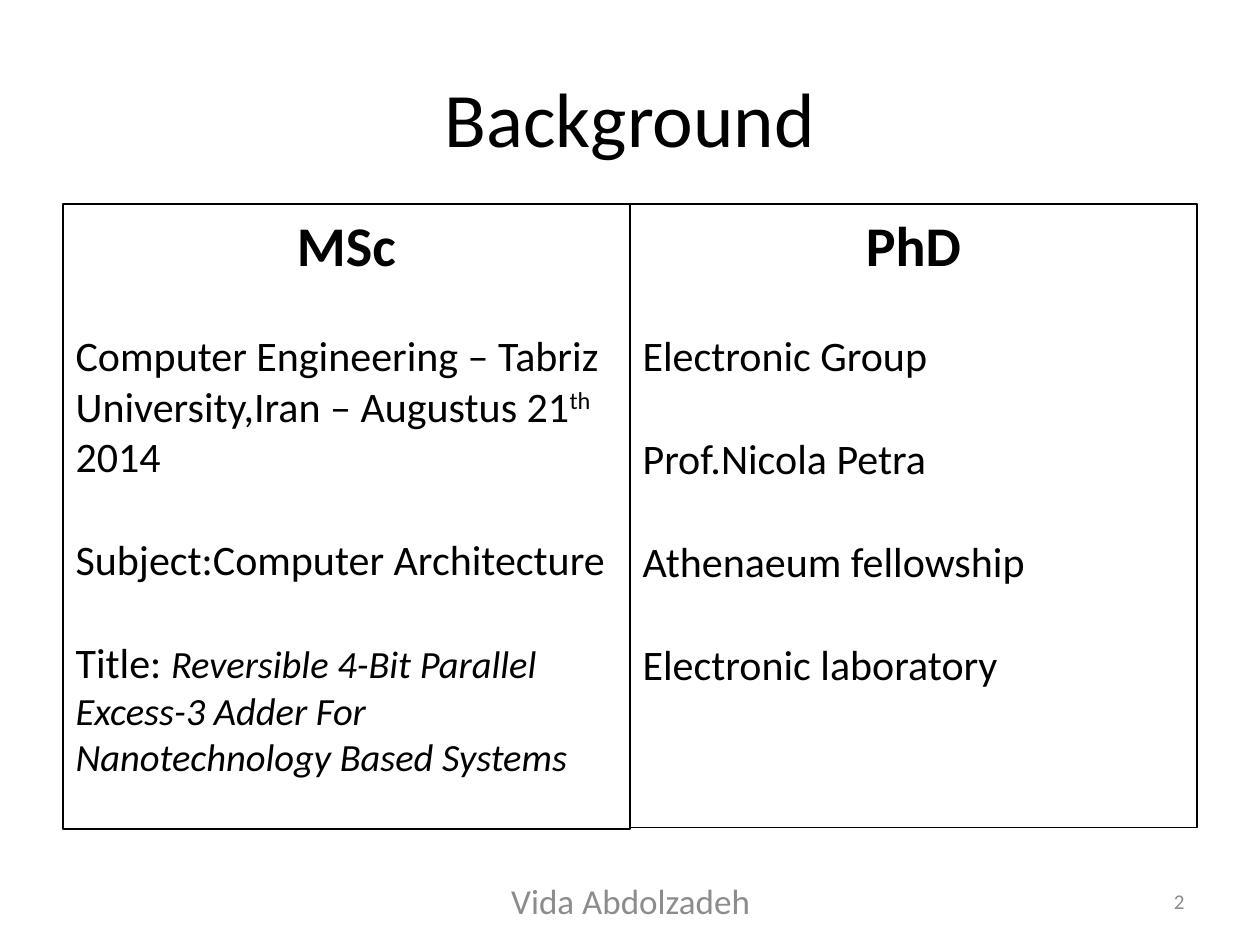
from lxml import etree
from pptx import Presentation
from pptx.dml.color import RGBColor
from pptx.enum.text import MSO_ANCHOR, MSO_AUTO_SIZE, PP_ALIGN
from pptx.oxml.ns import qn
from pptx.util import Cm, Pt

LEFT, CENTER, RIGHT = PP_ALIGN.LEFT, PP_ALIGN.CENTER, PP_ALIGN.RIGHT
TOP, MIDDLE = MSO_ANCHOR.TOP, MSO_ANCHOR.MIDDLE
NO_AUTOFIT = MSO_AUTO_SIZE.NONE

FONT = "Calibri"
BLACK, GRAY = "000000", "8C8C8C"
TWO_CONTENT_LAYOUT = 3
MARGIN, COLUMN_TOP, COLUMN_WIDTH = 1.27, 4.11, 11.43
FOOTER_TOP, FOOTER_HEIGHT = 17.65, 1.02

# Each paragraph is a list of (text, style) runs
MSC_ITEMS = [
    [("Computer Engineering – Tabriz University,Iran – Augustus 21", {}),
     ("th", {"superscript": True}), (" 2014", {})],
    [("Subject:Computer Architecture", {})],
    [("Title: ", {}),
     ("Reversible 4-Bit Parallel Excess-3 Adder For Nanotechnology Based Systems",
      {"size": 22, "italic": True})],
]
PHD_ITEMS = [[(text, {})] for text in (
    "Electronic Group", "Prof.Nicola Petra",
    "Athenaeum fellowship", "Electronic laboratory")]


def rgb(value):
    return RGBColor.from_string(value)


def place(box, left, top, width, height):
    box.left, box.top = Cm(left), Cm(top)
    box.width, box.height = Cm(width), Cm(height)


def prepare_frame(box, anchor):
    frame = box.text_frame
    frame.word_wrap = True
    frame.auto_size = NO_AUTOFIT
    frame.vertical_anchor = anchor
    return frame


def add_span(para, text, size=24, color=BLACK, bold=False, italic=False,
             superscript=False):
    span = para.add_run()
    span.text = text
    font = span.font
    font.name, font.size = FONT, Pt(size)
    font.bold, font.italic = bold, italic
    font.color.rgb = rgb(color)
    if superscript:
        font._element.set("baseline", "30000")


def format_para(para, align, space_before):
    """Remove the bullet and indent, then set alignment and spacing."""
    properties = para._p.get_or_add_pPr()
    properties.set("marL", "0")
    properties.set("indent", "0")
    etree.SubElement(properties, qn("a:buNone"))
    para.alignment = align
    para.space_before = Pt(space_before)


def fill_title(box, text):
    place(box, MARGIN, 0.76, 2 * COLUMN_WIDTH, 3.18)
    para = prepare_frame(box, MIDDLE).paragraphs[0]
    para.alignment = CENTER
    add_span(para, text, size=44)


def fill_column(box, index, height, heading, items):
    place(box, MARGIN + index * COLUMN_WIDTH, COLUMN_TOP, COLUMN_WIDTH, height)
    box.line.color.rgb = rgb(BLACK)
    box.line.width = Pt(0.75)
    frame = prepare_frame(box, TOP)
    para = frame.paragraphs[0]
    format_para(para, CENTER, 0)
    add_span(para, heading, size=32, bold=True)
    for spans in items:
        para = frame.add_paragraph()
        format_para(para, LEFT, 30)
        for text, style in spans:
            add_span(para, text, **style)


def add_footer(page, left, width, text, size, align):
    box = page.shapes.add_textbox(Cm(left), Cm(FOOTER_TOP),
                                  Cm(width), Cm(FOOTER_HEIGHT))
    para = prepare_frame(box, MIDDLE).paragraphs[0]
    para.alignment = align
    add_span(para, text, size=size, color=GRAY)


def main():
    deck = Presentation()
    deck.slide_width, deck.slide_height = Cm(25.4), Cm(19.05)
    page = deck.slides.add_slide(deck.slide_layouts[TWO_CONTENT_LAYOUT])
    title, msc, phd = page.placeholders

    # Title and the two framed columns
    fill_title(title, "Background")
    fill_column(msc, 0, 12.6, "MSc", MSC_ITEMS)
    fill_column(phd, 1, 12.57, "PhD", PHD_ITEMS)

    # Author and page number
    add_footer(page, 8.69, 8.05, "Vida Abdolzadeh", 20, CENTER)
    add_footer(page, 18.21, 5.92, "2", 12, RIGHT)

    deck.save("out.pptx")


if __name__ == "__main__":
    main()
